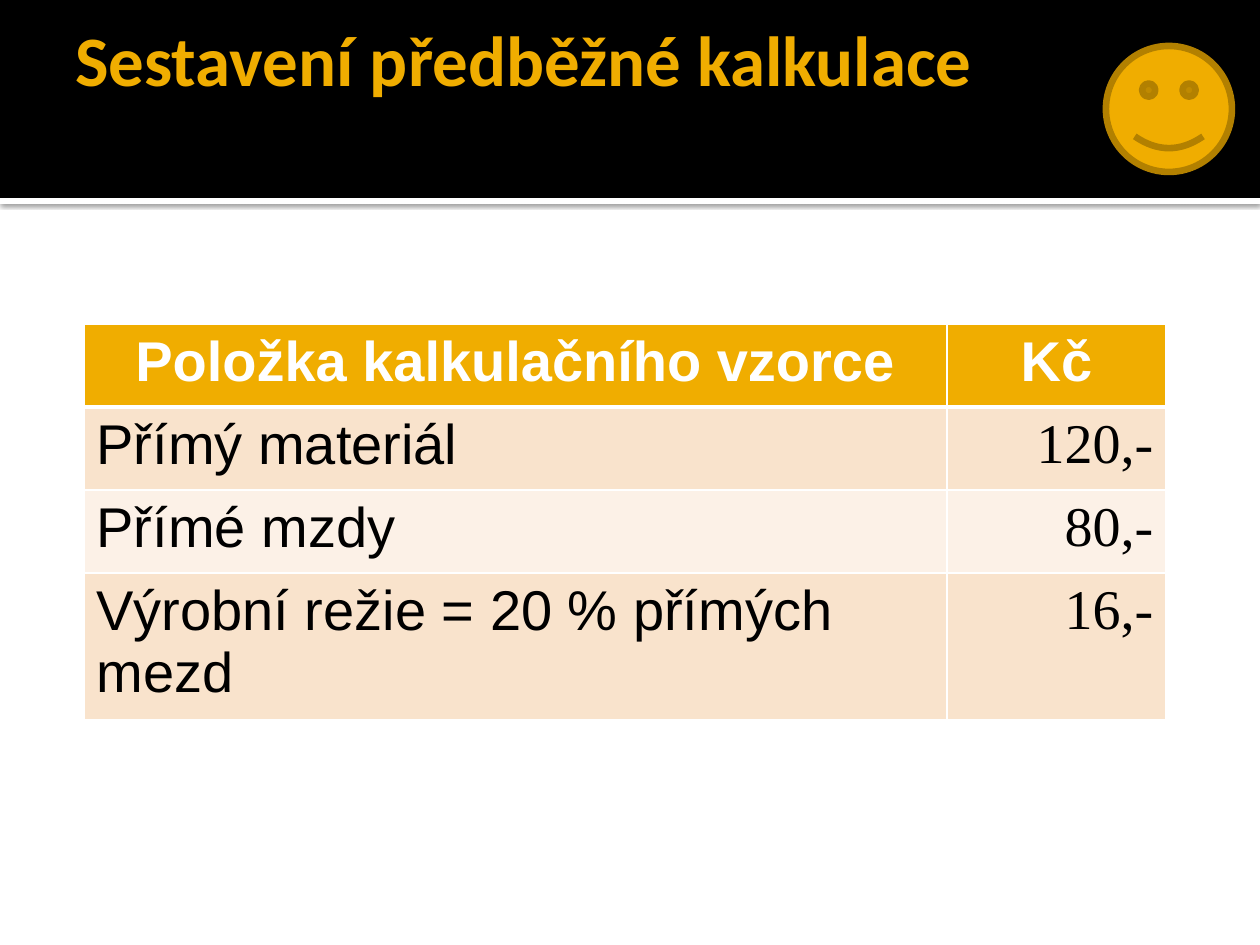
from dataclasses import dataclass

from lxml import etree
from pptx import Presentation
from pptx.dml.color import RGBColor
from pptx.enum.shapes import MSO_SHAPE
from pptx.enum.text import MSO_ANCHOR, PP_ALIGN
from pptx.oxml import parse_xml
from pptx.util import Pt

RECT, SMILEY = MSO_SHAPE.RECTANGLE, MSO_SHAPE.SMILEY_FACE
LEFT, CENTER, RIGHT = PP_ALIGN.LEFT, PP_ALIGN.CENTER, PP_ALIGN.RIGHT
TOP = MSO_ANCHOR.TOP
SCALE = 914400 // 126
NS = "http://schemas.openxmlformats.org/drawingml/2006/main"


@dataclass(frozen=True)
class Theme:
    black: str = "000000"
    white: str = "FFFFFF"
    gold: str = "F0AD00"
    brown: str = "B28000"
    bands: tuple = ("F9E3CC", "FCF1E7")
    head: str = "Calibri"
    body: str = "Arial"
    money: str = "Times New Roman"
    title: float = 40.5
    cell: int = 32


THEME = Theme()
ROWS = [
    ("Položka kalkulačního vzorce", "Kč"),
    ("Přímý materiál", "120,-"),
    ("Přímé mzdy", "80,-"),
    ("Výrobní režie = 20 % přímých mezd", "16,-"),
]


def px(*nums):
    return [n * SCALE for n in nums]


def paint(fill, color):
    fill.solid()
    fill.fore_color.rgb = RGBColor.from_string(color)


def style(para, face, size, color, bold=False, align=LEFT):
    para.alignment = align
    font = para.font
    font.name, font.size, font.bold = face, Pt(size), bold
    font.color.rgb = RGBColor.from_string(color)


def add_shape(slide, kind, box, color, edge=None, width=0):
    shape = slide.shapes.add_shape(kind, *px(*box))
    shape.shadow.inherit = False
    paint(shape.fill, color)
    if edge:
        paint(shape.line.fill, edge)
        shape.line.width = Pt(width)
    else:
        shape.line.fill.background()
    return shape


def add_shadow(shape):
    """Put a soft shadow straight below the shape."""
    effects = shape._element.spPr.find(f"{{{NS}}}effectLst")
    effects.append(parse_xml(
        f'<a:outerShdw xmlns:a="{NS}" blurRad="{Pt(2.5)}" dist="{Pt(0.8)}" '
        f'dir="5400000" rotWithShape="0"><a:srgbClr val="{THEME.black}">'
        '<a:alpha val="60000"/></a:srgbClr></a:outerShdw>'))


def add_title(slide, text):
    box = slide.shapes.add_textbox(*px(63, 16, 1134, 188))
    frame = box.text_frame
    frame.word_wrap = True
    frame.vertical_anchor = TOP
    frame.margin_top = 0
    frame.text = text
    style(frame.paragraphs[0], THEME.head, THEME.title, THEME.gold, True)


def add_edges(cell, top, base):
    props = cell._tc.get_or_add_tcPr()
    for side, width in zip("LRTB", (1, 1, top, base)):
        line = etree.SubElement(props, f"{{{NS}}}ln{side}", w=str(Pt(width)))
        fill = etree.SubElement(line, f"{{{NS}}}solidFill")
        etree.SubElement(fill, f"{{{NS}}}srgbClr", val=THEME.white)


def fill_cell(cell, text, row, col):
    cell.text = text
    para = cell.text_frame.paragraphs[0]
    add_edges(cell, 3 if row == 1 else 1, 3 if row == 0 else 1)
    if row == 0:
        paint(cell.fill, THEME.gold)
        style(para, THEME.body, THEME.cell, THEME.white, True, CENTER)
    else:
        paint(cell.fill, THEME.bands[(row - 1) % 2])
        face, align = ((THEME.body, LEFT), (THEME.money, RIGHT))[col]
        style(para, face, THEME.cell, THEME.black, align=align)


def add_costs(slide, rows):
    widths, high = (863, 219), 83
    box = px(84, 324, sum(widths), high * len(rows))
    table = slide.shapes.add_table(len(rows), len(widths), *box).table
    for col, width in zip(table.columns, px(*widths)):
        col.width = width
    for i, row in enumerate(rows):
        for j, text in enumerate(row):
            fill_cell(table.cell(i, j), text, i, j)


def main():
    deck = Presentation()
    deck.slide_width, deck.slide_height = px(1260, 945)
    slide = deck.slides.add_slide(deck.slide_layouts[6])
    paint(slide.background.fill, THEME.white)
    add_shadow(add_shape(slide, RECT, (0, 198, 1260, 6), THEME.white))
    add_shape(slide, RECT, (0, 0, 1260, 198), THEME.black)
    add_title(slide, "Sestavení předběžné kalkulace")
    add_costs(slide, ROWS)
    add_shape(slide, SMILEY, (1106, 46, 126, 126), THEME.gold,
              THEME.brown, 3.78)
    deck.save("out.pptx")


if __name__ == "__main__":
    main()
